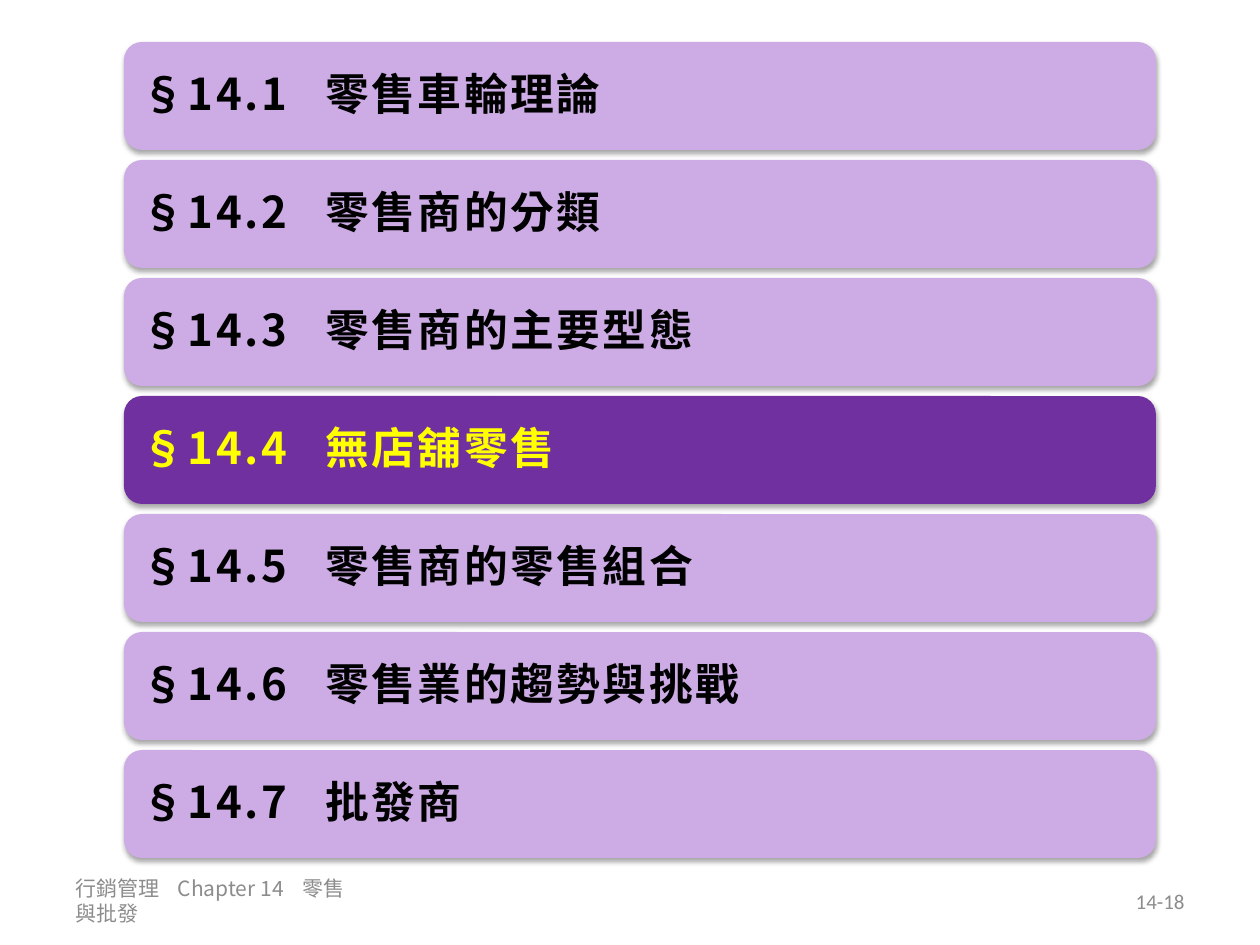
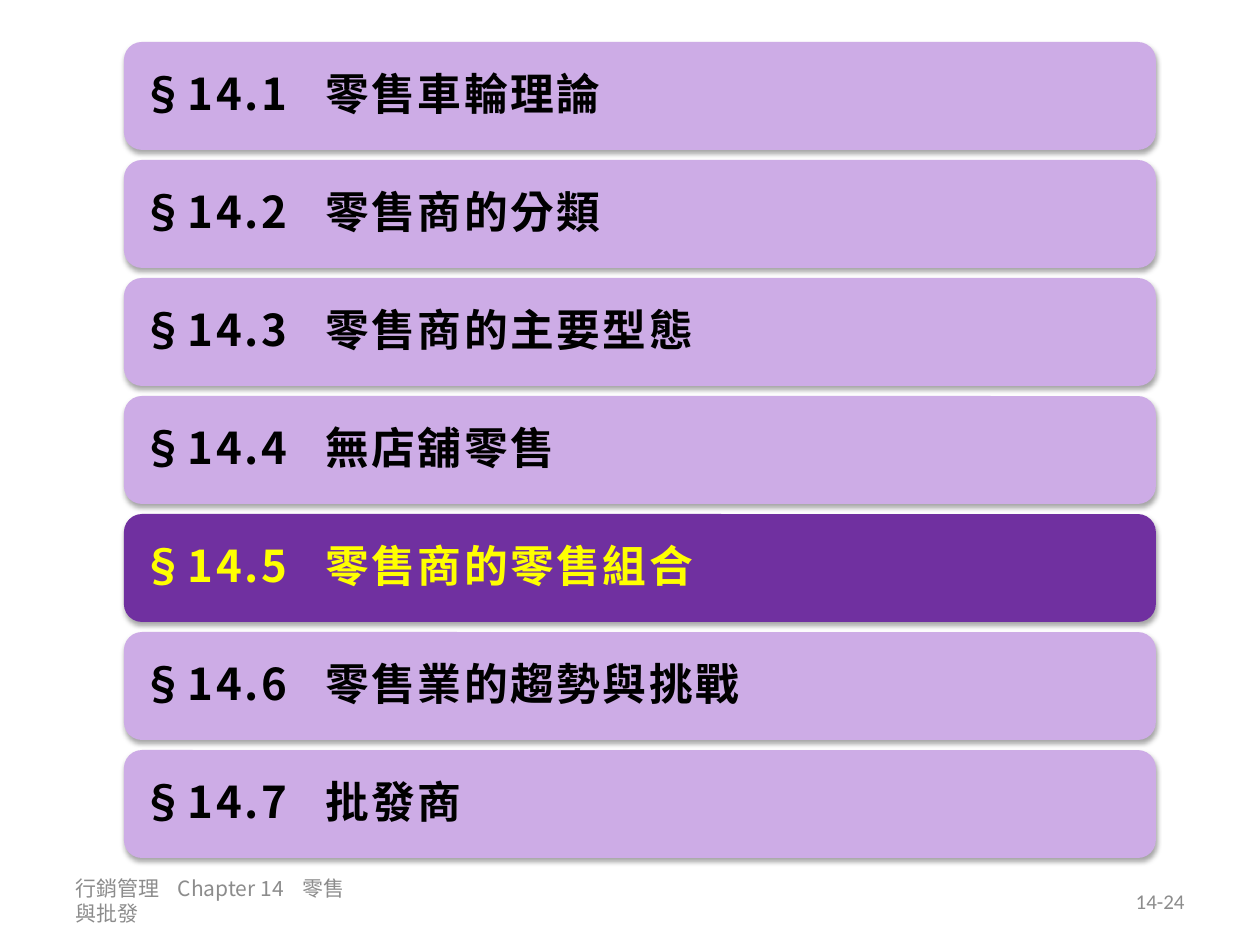
from dataclasses import dataclass

from lxml.etree import SubElement
from pptx import Presentation
from pptx.dml.color import RGBColor as Rgb
from pptx.enum.shapes import MSO_SHAPE as Preset
from pptx.enum.text import MSO_ANCHOR as Anchor, PP_ALIGN as Align
from pptx.oxml.ns import qn
from pptx.util import Pt


@dataclass(frozen=True)
class Theme:
    bar: str = "CDACE6"
    current_bar: str = "7030A0"
    ink: str = "000000"
    current_ink: str = "FFFF00"
    footer_ink: str = "8C8C8C"
    shadow: str = "000000"
    cjk: str = "Noto Sans CJK SC"
    latin: str = "Calibri"
    section_size: int = 25
    footer_size: int = 12


@dataclass(frozen=True)
class Box:
    left: float
    top: float
    width: float
    height: float

    def lengths(self):
        return [Pt(v) for v in (self.left, self.top, self.width, self.height)]


THEME = Theme()
SECTIONS = ["零售車輪理論", "零售商的分類", "零售商的主要型態", "無店舖零售",
            "零售商的零售組合", "零售業的趨勢與挑戰", "批發商"]
FOOTER = "行銷管理\tChapter 14\t零售與批發"
SLIDES = [(4, "14-18"), (5, "14-24")]
AGENDA_BOX = Box(70.8, 24, 589.7, 466.3)
FOOTER_BOX = Box(36, 500.4, 648, 28.8)
BAR_GAP = 5.75


def set_format(target, values):
    for attribute, value in values.items():
        setattr(target, attribute, value)


def add_tabs(paragraph, stops):
    tabs = SubElement(paragraph._p.get_or_add_pPr(), qn("a:tabLst"))
    for stop in stops:
        SubElement(tabs, qn("a:tab"), pos=str(Pt(stop)), algn="l")


def add_run(paragraph, text, face, size, color, bold=False, spacing=0):
    run = paragraph.add_run()
    run.text = text
    set_format(run.font, {"name": face, "size": Pt(size), "bold": bold})
    run.font.color.rgb = Rgb.from_string(color)
    properties = run.font._element
    properties.set("lang", "zh-TW")
    properties.set("spc", str(round(spacing * 100)))
    properties.find(qn("a:latin")).addnext(
        properties.makeelement(qn("a:ea"), {"typeface": THEME.cjk}))


def add_soft_shadow(shape):
    shape.shadow.inherit = False
    effects = shape._element.spPr.find(qn("a:effectLst"))
    shadow = SubElement(effects, qn("a:outerShdw"), blurRad=str(Pt(3.1)),
                        dist=str(Pt(1.8)), dir="5400000", rotWithShape="0")
    color = SubElement(shadow, qn("a:srgbClr"), val=THEME.shadow)
    SubElement(color, qn("a:alpha"), val="35000")


def add_section_bar(slide, box, number, title, is_current):
    bar = slide.shapes.add_shape(Preset.ROUNDED_RECTANGLE, *box.lengths())
    bar.fill.solid()
    bar.fill.fore_color.rgb = Rgb.from_string(
        THEME.current_bar if is_current else THEME.bar)
    bar.line.fill.background()
    add_soft_shadow(bar)
    inset = Pt(7.2)
    set_format(bar.text_frame, {
        "word_wrap": True, "vertical_anchor": Anchor.MIDDLE,
        "margin_left": inset, "margin_right": inset,
        "margin_top": inset, "margin_bottom": inset})
    heading = bar.text_frame.paragraphs[0]
    set_format(heading, {"alignment": Align.LEFT, "line_spacing": 0.9})
    add_tabs(heading, [105])
    ink = THEME.current_ink if is_current else THEME.ink
    for text, face in ((f"§14.{number}\t", THEME.cjk), (title, THEME.latin)):
        add_run(heading, text, face, THEME.section_size, ink, True, 1.5)


def add_agenda(slide, box, current):
    pitch = (box.height + BAR_GAP) / len(SECTIONS)
    for number, title in enumerate(SECTIONS, 1):
        bar_box = Box(box.left, box.top + (number - 1) * pitch,
                      box.width, pitch - BAR_GAP)
        add_section_bar(slide, bar_box, number, title, number == current)


def add_footer_text(slide, box, text, face, alignment, stops=()):
    frame = slide.shapes.add_textbox(*box.lengths()).text_frame
    set_format(frame, {"word_wrap": True, "vertical_anchor": Anchor.MIDDLE})
    line = frame.paragraphs[0]
    line.alignment = alignment
    if stops:
        add_tabs(line, stops)
    add_run(line, text, face, THEME.footer_size, THEME.footer_ink)


def add_footer(slide, box, page):
    chapter_width, page_width = 176.4, 168
    add_footer_text(slide, Box(box.left, box.top, chapter_width, box.height),
                    FOOTER, THEME.cjk, Align.LEFT, [58.5, 130])
    page_left = box.left + box.width - page_width
    add_footer_text(slide, Box(page_left, box.top, page_width, box.height),
                    page, THEME.latin, Align.RIGHT)


def add_agenda_slide(deck, current, page):
    slide = deck.slides.add_slide(deck.slide_layouts[6])
    add_footer(slide, FOOTER_BOX, page)
    add_agenda(slide, AGENDA_BOX, current)


def main():
    deck = Presentation()
    set_format(deck, {"slide_width": Pt(720), "slide_height": Pt(540)})
    for current, page in SLIDES:
        add_agenda_slide(deck, current, page)
    deck.save("out.pptx")


if __name__ == "__main__":
    main()
